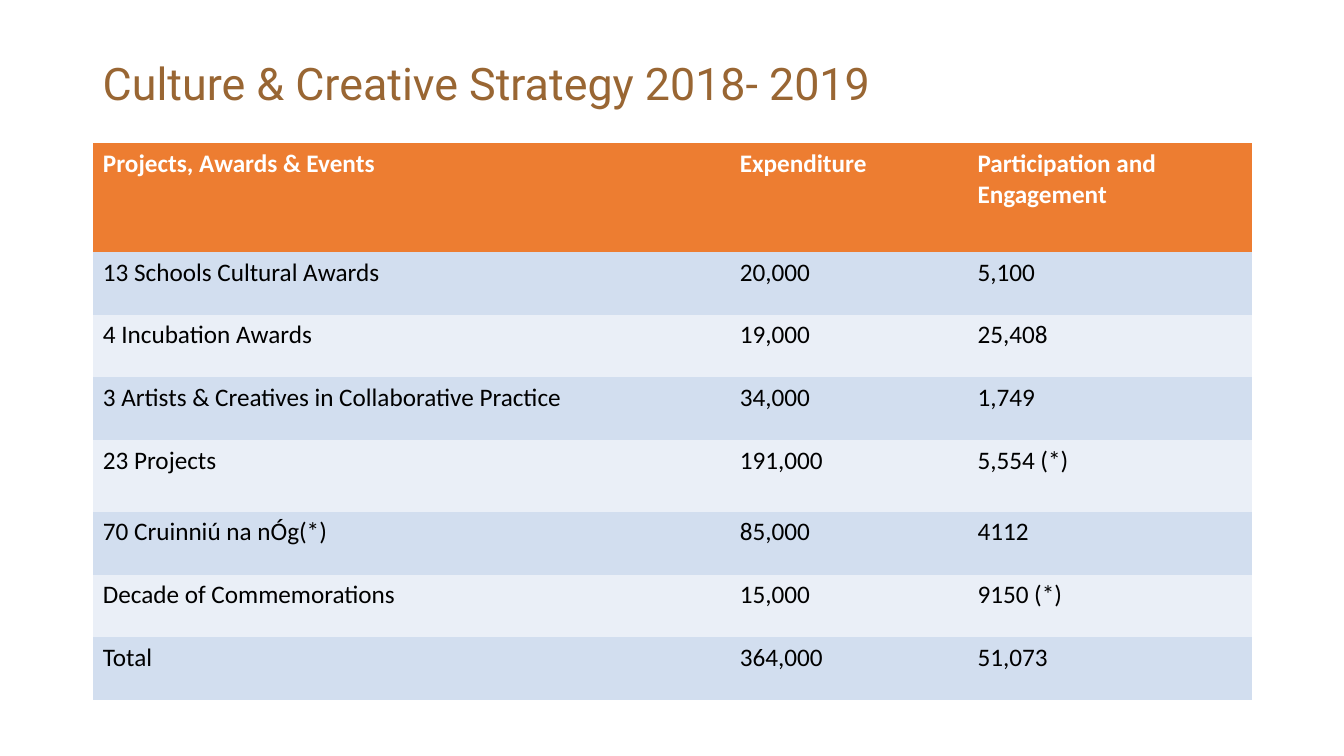
from pptx import Presentation
from pptx.dml.color import RGBColor
from pptx.enum.text import MSO_ANCHOR
from pptx.oxml.ns import qn
from pptx.util import Cm, Pt

MIDDLE = MSO_ANCHOR.MIDDLE

TITLE = "Culture & Creative Strategy 2018- 2019"
ROWS = [
    ("Projects, Awards & Events", "Expenditure", "Participation and Engagement"),
    ("13 Schools Cultural Awards", "20,000", "5,100"),
    ("4 Incubation Awards", "19,000", "25,408"),
    ("3 Artists & Creatives in Collaborative Practice", "34,000", "1,749"),
    ("23 Projects", "191,000", "5,554 (*)"),
    ("70 Cruinniú na nÓg(*)", "85,000", "4112"),
    ("Decade of Commemorations", "15,000", "9150 (*)"),
    ("Total", "364,000", "51,073"),
]
COLORS = {
    "title": "996633",
    "head": "ED7D31",
    "odd": "D2DEEF",
    "even": "EAEFF7",
    "light": "FFFFFF",
    "dark": "000000",
}
FORMATS = {
    "title": {"name": "Roboto", "size": Pt(32), "bold": False},
    "head": {"name": "Calibri", "size": Pt(18), "bold": True},
    "body": {"name": "Calibri", "size": Pt(18), "bold": False},
}
PLAIN = "{2D5ABB26-0587-4C30-8999-92F81FD0307C}"
LEFT, WIDTH = 2.34, 29.21
TOP = 3.61
WIDTHS = (16.05, 5.99, 7.17)
HEIGHTS = [2.74] + [1.58] * 3 + [1.81] + [1.58] * 3


def color(key):
    return RGBColor.from_string(COLORS[key])


def write(frame, text, style, ink):
    para = frame.paragraphs[0]
    run = para.add_run()
    run.text = text
    for key, value in FORMATS[style].items():
        setattr(run.font, key, value)
    run.font.color.rgb = color(ink)
    return para


def add_title(slide):
    box = slide.shapes.add_textbox(Cm(LEFT), Cm(1.02), Cm(WIDTH), Cm(2.31))
    frame = box.text_frame
    frame.word_wrap = True
    frame.vertical_anchor = MIDDLE
    write(frame, TITLE, "title", "title").line_spacing = 0.9


def add_grid(slide):
    grid = slide.shapes.add_table(
        len(ROWS), len(WIDTHS), Cm(LEFT), Cm(TOP), Cm(WIDTH), Cm(sum(HEIGHTS))
    ).table
    grid._tbl.tblPr.find(qn("a:tableStyleId")).text = PLAIN
    for col, width in zip(grid.columns, WIDTHS):
        col.width = Cm(width)
    for index, (row, height) in enumerate(zip(grid.rows, HEIGHTS)):
        row.height = Cm(height)
        if index == 0:
            fill, style, ink = "head", "head", "light"
        else:
            fill, style, ink = ("even", "odd")[index % 2], "body", "dark"
        for cell, text in zip(row.cells, ROWS[index]):
            cell.fill.solid()
            cell.fill.fore_color.rgb = color(fill)
            write(cell.text_frame, text, style, ink)


def main():
    deck = Presentation()
    deck.slide_width, deck.slide_height = Cm(33.87), Cm(19.05)
    slide = deck.slides.add_slide(deck.slide_layouts[6])
    add_title(slide)
    add_grid(slide)
    deck.save("out.pptx")


if __name__ == "__main__":
    main()
